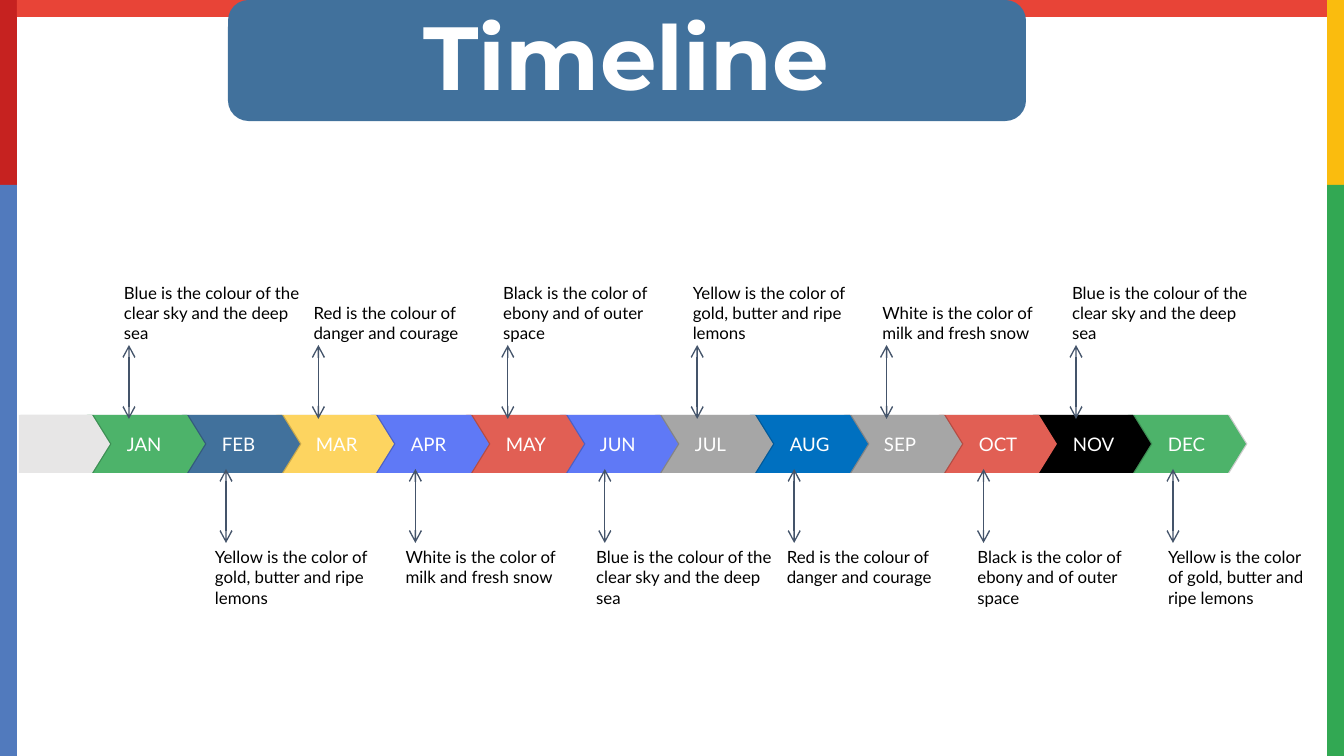
from lxml import etree
from pptx import Presentation
from pptx import util as u
from pptx.dml.color import RGBColor
from pptx.enum import shapes, text
from pptx.oxml import ns

PX = 9144000 / 1344
WHITE = RGBColor(0xFF, 0xFF, 0xFF)
BLACK = RGBColor(0, 0, 0)
CRIMSON = RGBColor(0xC6, 0x22, 0x20)
BLUE = RGBColor(0x51, 0x7A, 0xBD)
AMBER = RGBColor(0xFA, 0xBC, 0x0E)
GREEN = RGBColor(0x32, 0xA8, 0x53)
RED = RGBColor(0xE8, 0x44, 0x37)
STEEL = RGBColor(0x41, 0x71, 0x9C)
LEAF = RGBColor(0x4D, 0xB3, 0x6A)
YELLOW = RGBColor(0xFD, 0xD4, 0x60)
VIOLET = RGBColor(0x5F, 0x79, 0xF6)
CORAL = RGBColor(0xE1, 0x5F, 0x54)
GREY = RGBColor(0xA6, 0xA6, 0xA6)
AZURE = RGBColor(0x00, 0x70, 0xC0)
PALE = RGBColor(0xE7, 0xE6, 0xE6)
SLATE = RGBColor(0x44, 0x54, 0x6A)

SKY = "Blue is the colour of the clear sky and the deep sea"
DANGER = "Red is the colour of danger and courage"
EBONY = "Black is the color of ebony and of outer space"
LEMONS = "Yellow is the color of gold, butter and ripe lemons"
MILK = "White is the color of milk and fresh snow"

MONTHS = [
    ("JAN", LEAF, SKY), ("FEB", STEEL, LEMONS), ("MAR", YELLOW, DANGER),
    ("APR", VIOLET, MILK), ("MAY", CORAL, EBONY), ("JUN", VIOLET, SKY),
    ("JUL", GREY, LEMONS), ("AUG", AZURE, DANGER), ("SEP", GREY, MILK),
    ("OCT", CORAL, EBONY), ("NOV", BLACK, SKY), ("DEC", LEAF, LEMONS),
]

prs = Presentation()
prs.slide_width, prs.slide_height = round(1344 * PX), round(756 * PX)
slide = prs.slides.add_slide(prs.slide_layouts[5])


def add_block(kind, left, top, width, height, color):
    block = slide.shapes.add_shape(kind, *(round(v * PX) for v in (left, top, width, height)))
    block.shadow.inherit = False
    block.fill.solid()
    block.fill.fore_color.rgb = color
    block.line.fill.background()
    return block


def write(shape, words, font="Lato", size=9, color=BLACK, bold=False, inset=0,
          align=text.PP_ALIGN.LEFT, anchor=text.MSO_ANCHOR.MIDDLE, spacing=1.0):
    frame = shape.text_frame
    frame.auto_size = text.MSO_AUTO_SIZE.NONE
    frame.word_wrap = True
    frame.margin_left = round(inset * PX)
    frame.margin_top = frame.margin_right = frame.margin_bottom = 0
    frame.vertical_anchor = anchor
    paragraph = frame.paragraphs[0]
    paragraph.alignment = align
    paragraph.line_spacing = spacing
    run = paragraph.add_run()
    run.text = words
    run.font.name, run.font.size, run.font.bold = font, u.Pt(size), bold
    run.font.color.rgb = color


for left, top, width, height, color in [
    (0, 0, 17, 571, CRIMSON), (0, 185, 17, 571, BLUE),
    (1327, 0, 17, 571, AMBER), (1327, 185, 17, 571, GREEN),
    (17, 0, 1310, 17, RED),
]:
    add_block(shapes.MSO_SHAPE.RECTANGLE, left, top, width, height, color)

banner = add_block(shapes.MSO_SHAPE.ROUNDED_RECTANGLE, 228, 0, 798, 121, STEEL)
banner.adjustments[0] = 0.17

title = slide.shapes.title
title.left, title.top, title.width, title.height = (round(v * PX) for v in (47, -12, 1159, 146))
write(title, "Timeline", font="Montserrat", size=48, color=WHITE, bold=True,
      align=text.PP_ALIGN.CENTER, spacing=0.9)
title.element.getparent().append(title.element)

steps = [(87 + round(94.65 * i), 118, color, month) for i, (month, color, _) in enumerate(MONTHS)]
for left, width, color, month in reversed([(19, 91, PALE, "")] + steps):
    step = add_block(shapes.MSO_SHAPE.PENTAGON, left, 415, width, 58, color)
    step.adjustments[0] = 0.31
    effects = step.element.spPr.find(ns.qn("a:effectLst"))
    shade = etree.SubElement(effects, ns.qn("a:outerShdw"), dist="10160", dir="0", rotWithShape="0")
    tint = etree.SubElement(shade, ns.qn("a:srgbClr"), val="000000")
    etree.SubElement(tint, ns.qn("a:alpha"), val="20000")
    if month:
        write(step, month, size=10, color=WHITE, inset=40)

for i, (month, _, fact) in enumerate(MONTHS):
    pair, below = divmod(i, 2)
    if below:
        arrow_x, start, end = 226 + 189.4 * pair, 543, 469
        fact_x, fact_y, anchor = 215 + 190.6 * pair, 547, text.MSO_ANCHOR.TOP
    else:
        arrow_x, start, end = 129 + 189.4 * pair, 419, 345
        fact_x, fact_y, anchor = 124 + 189.6 * pair, 265, text.MSO_ANCHOR.BOTTOM
    arrow = slide.shapes.add_connector(
        shapes.MSO_CONNECTOR.STRAIGHT,
        *(round(v * PX) for v in (arrow_x, start, arrow_x, end)))
    arrow.line.color.rgb = SLATE
    arrow.line.width = u.Pt(0.75)
    for tip in ("a:headEnd", "a:tailEnd"):
        etree.SubElement(arrow.line._get_or_add_ln(), ns.qn(tip), type="arrow")
    etree.SubElement(arrow.element.spPr, ns.qn("a:effectLst"))

    fact_width = 148 if month == "DEC" else 179
    caption = slide.shapes.add_textbox(*(round(v * PX) for v in (fact_x, fact_y, fact_width, 78)))
    write(caption, fact, anchor=anchor)

prs.save("out.pptx")
